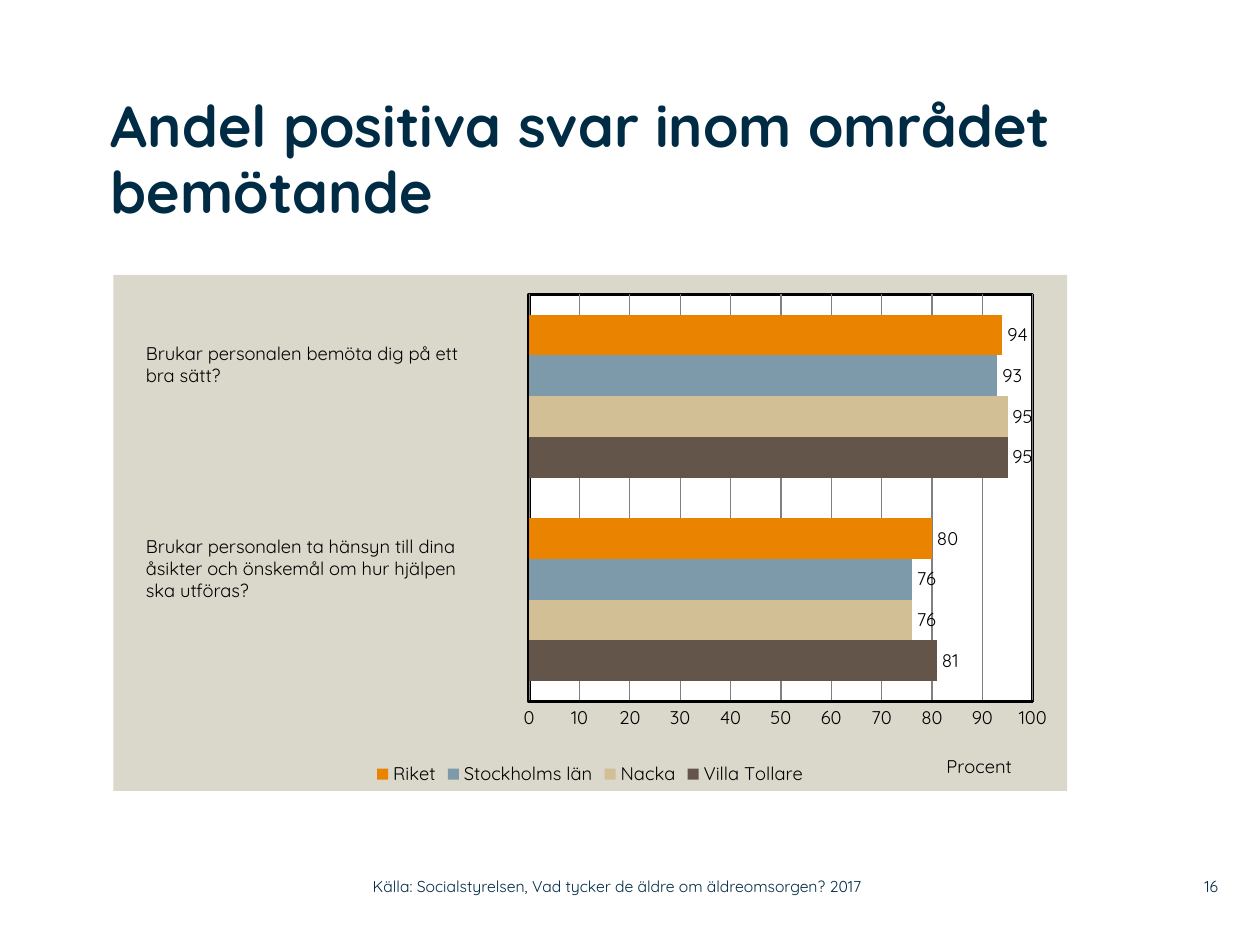
from pptx import Presentation
from pptx.chart.data import CategoryChartData
from pptx.dml.color import RGBColor
from pptx.enum.chart import XL_CHART_TYPE, XL_LABEL_POSITION, XL_LEGEND_POSITION, XL_TICK_MARK
from pptx.enum.text import MSO_ANCHOR, MSO_AUTO_SIZE, PP_ALIGN
from pptx.oxml import parse_xml
from pptx.oxml.ns import nsdecls, qn
from pptx.util import Pt

FONT = "Quicksand"
COLORS = {
    "navy": "002B45",
    "black": "000000",
    "white": "FFFFFF",
    "panel": "DAD7CB",
    "grid": "808080",
    "brown": "635549",
    "sand": "D3BF96",
    "blue": "7D9AAA",
    "orange": "E98300",
}
SERIES = [
    ("Villa Tollare", (81, 95), "brown"),
    ("Nacka", (76, 95), "sand"),
    ("Stockholms län", (76, 93), "blue"),
    ("Riket", (80, 94), "orange"),
]


def rgb(name):
    return RGBColor.from_string(COLORS[name])


def style_font(font, size, color, bold=False):
    font.name = FONT
    font.size = Pt(size)
    font.bold = bold
    font.color.rgb = rgb(color)


def style_line(line, color, width):
    line.color.rgb = rgb(color)
    line.width = Pt(width)


def fill_text(sp, text, size, color, bold=False, align=PP_ALIGN.LEFT):
    tf = sp.text_frame
    tf.word_wrap = True
    tf.text = text
    for p in tf.paragraphs:
        p.alignment = align
        for r in p.runs:
            style_font(r.font, size, color, bold)
    return tf


def clear_margins(tf):
    tf.margin_left = tf.margin_right = tf.margin_top = tf.margin_bottom = 0


def add_title(s, text):
    sp = s.shapes.title
    sp.left, sp.top, sp.width, sp.height = Pt(63.4), Pt(54), Pt(547), Pt(102)
    tf = fill_text(sp, text, 33, "navy", bold=True)
    clear_margins(tf)
    tf.auto_size = MSO_AUTO_SIZE.NONE
    tf.vertical_anchor = MSO_ANCHOR.TOP
    tf.paragraphs[0].line_spacing = 0.95


def add_question(s, text, top, height):
    sp = s.shapes.add_textbox(Pt(76.3), Pt(top), Pt(215), Pt(height))
    fill_text(sp, text, 10.5, "black")


def add_footer(s, text, left, width, align):
    sp = s.shapes.add_textbox(Pt(left), Pt(496), Pt(width), Pt(21))
    tf = fill_text(sp, text, 9, "navy", align=align)
    clear_margins(tf)
    tf.vertical_anchor = MSO_ANCHOR.MIDDLE


def set_layout(parent, index, target="", **place):
    for old in parent.findall(qn("c:layout")):
        parent.remove(old)
    inner = f'<c:layoutTarget val="{target}"/>' if target else ""
    inner += '<c:xMode val="edge"/><c:yMode val="edge"/>'
    inner += "".join(f'<c:{key} val="{val}"/>' for key, val in place.items())
    parent.insert(index, parse_xml(
        f'<c:layout {nsdecls("c")}><c:manualLayout>{inner}</c:manualLayout></c:layout>'))


def area_format(fill, line):
    return parse_xml(
        f'<c:spPr {nsdecls("c", "a")}><a:solidFill><a:srgbClr val="{COLORS[fill]}"/></a:solidFill>'
        f'{line}</c:spPr>')


def style_value_axis(axis):
    axis.minimum_scale, axis.maximum_scale, axis.major_unit = 0, 100, 10
    axis.major_tick_mark = axis.minor_tick_mark = XL_TICK_MARK.NONE
    axis.has_major_gridlines = True
    style_line(axis.major_gridlines.format.line, "grid", 0.75)
    style_line(axis.format.line, "black", 2)
    style_font(axis.tick_labels.font, 10.5, "black")
    title = axis.axis_title
    title.text_frame.text = "Procent"
    style_font(title.text_frame.paragraphs[0].runs[0].font, 10.5, "black")
    set_layout(title._element, 1, x=0.87, y=0.92)


def add_bar_chart(s):
    data = CategoryChartData()
    data.categories = ["1", "2"]
    for name, values, _ in SERIES:
        data.add_series(name, values)
    chart = s.shapes.add_chart(XL_CHART_TYPE.BAR_CLUSTERED, Pt(64.8), Pt(157),
                               Pt(545), Pt(295), data).chart
    style_font(chart.font, 10.5, "black")
    chart.has_title = False
    chart.has_legend = True
    chart.legend.position = XL_LEGEND_POSITION.BOTTOM
    chart.legend.include_in_layout = False
    style_font(chart.legend.font, 10.5, "black")
    chart.category_axis.visible = False
    style_value_axis(chart.value_axis)

    plot = chart.plots[0]
    plot.gap_width = 100
    plot.overlap = 0
    plot.vary_by_categories = False
    for series, (_, _, color) in zip(plot.series, SERIES):
        series.format.fill.solid()
        series.format.fill.fore_color.rgb = rgb(color)
        labels = series.data_labels
        labels.show_value = True
        labels.position = XL_LABEL_POSITION.OUTSIDE_END
        style_font(labels.font, 10.5, "black")

    root = chart._chartSpace
    area = root.find(qn("c:chart")).find(qn("c:plotArea"))
    set_layout(area, 0, "inner", x=0.436, y=0.038, w=0.528, h=0.789)
    border = f'<a:ln w="25400"><a:solidFill><a:srgbClr val="{COLORS["black"]}"/></a:solidFill></a:ln>'
    area.append(area_format("white", border))
    root.find(qn("c:chart")).addnext(area_format("panel", "<a:ln><a:noFill/></a:ln>"))


def main():
    prs = Presentation()
    prs.slide_width, prs.slide_height = Pt(720), Pt(540)
    s = prs.slides.add_slide(prs.slide_layouts[5])
    add_bar_chart(s)
    add_title(s, "Andel positiva svar inom området bemötande")
    add_question(s, "Brukar personalen bemöta dig på ett\nbra sätt?", 192, 32.4)
    add_question(s, "Brukar personalen ta hänsyn till dina\nåsikter och önskemål om hur hjälpen\n"
                    "ska utföras?", 302, 45.4)
    add_footer(s, "16", 662, 34, PP_ALIGN.RIGHT)
    add_footer(s, "Källa: Socialstyrelsen, Vad tycker de äldre om äldreomsorgen? 2017",
               213, 319, PP_ALIGN.LEFT)
    prs.save("out.pptx")


if __name__ == "__main__":
    main()
